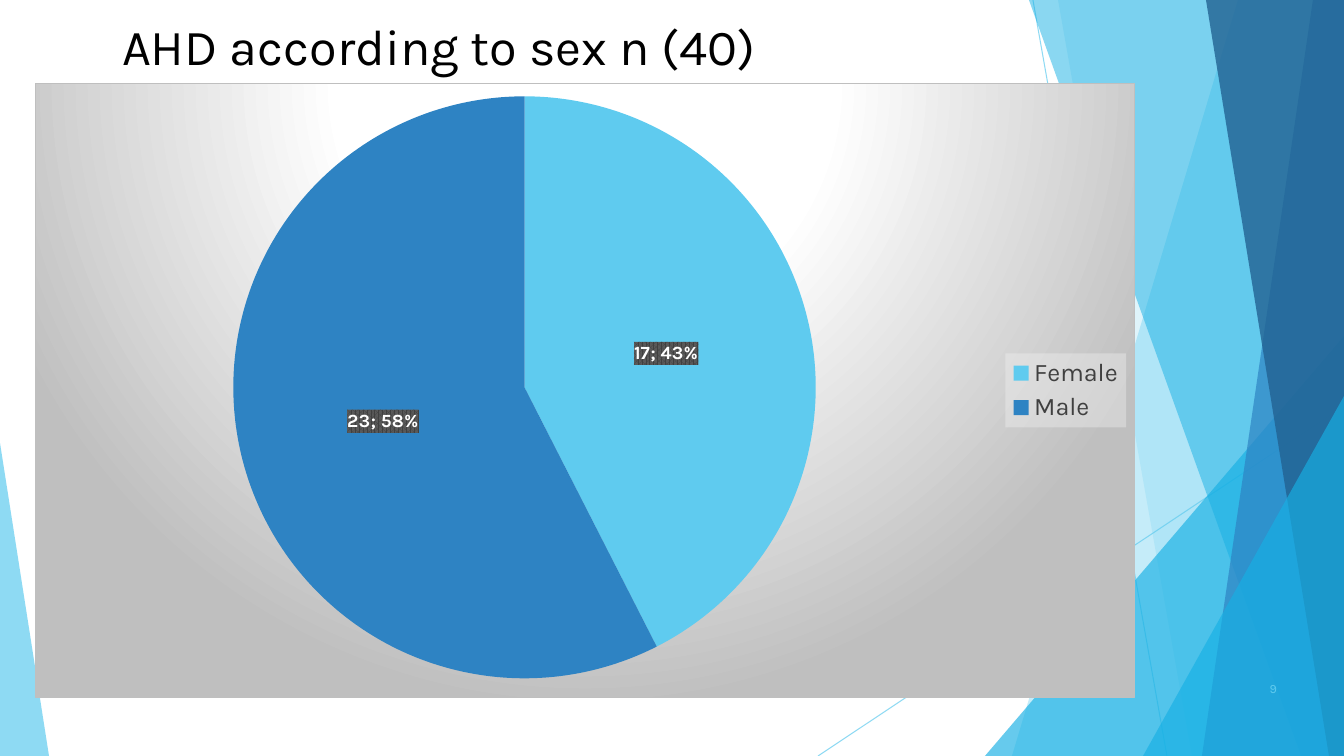
from pptx import Presentation
from pptx.chart.data import CategoryChartData
from pptx.dml.color import RGBColor
from pptx.enum.chart import XL_CHART_TYPE, XL_LABEL_POSITION, XL_LEGEND_POSITION
from pptx.enum.shapes import MSO_CONNECTOR, MSO_SHAPE
from pptx.enum.text import MSO_ANCHOR, PP_ALIGN
from pptx.oxml import parse_xml
from pptx.oxml.ns import nsdecls, qn
from pptx.util import Emu, Pt
from lxml.etree import SubElement

PX = 914400 / 100.8
WIDTH, HEIGHT = 1344, 756
FONT = "Karla"
BLACK = RGBColor(0x00, 0x00, 0x00)
WHITE = RGBColor(0xFF, 0xFF, 0xFF)
GREY = RGBColor(0x40, 0x40, 0x40)
SKY = RGBColor(0x5F, 0xCB, 0xEF)
CYAN = RGBColor(0x17, 0xB0, 0xE4)
BLUE = RGBColor(0x2E, 0x83, 0xC3)
NAVY = RGBColor(0x22, 0x62, 0x92)

RAYS = [((1033, 0), (1167, HEIGHT)), ((WIDTH, 406), (818, HEIGHT))]
FACETS = [
    ("band", (1238, 1012), SKY, 36),
    ("band", (1058, 1192), SKY, 20),
    ("triangle", (985, 336, 359, 420, 1), CYAN, 66),
    ("band", (1029, 1301), CYAN, 50),
    ("band", (1313, 1202), BLUE, 70),
    ("band", (1206, 1329), NAVY, 80),
    ("triangle", (1143, 396, 201, 360, 1), CYAN, 66),
    ("triangle", (0, 443, 49, 313, 0), SKY, 70),
]
CHART_FILL = f"""<c:spPr {nsdecls('c', 'a')}>
<a:gradFill><a:gsLst>
<a:gs pos="0"><a:srgbClr val="FFFFFF"/></a:gs>
<a:gs pos="39000"><a:srgbClr val="FFFFFF"/></a:gs>
<a:gs pos="100000"><a:srgbClr val="BFBFBF"/></a:gs>
</a:gsLst><a:path path="circle">
<a:fillToRect l="50000" t="-80000" r="50000" b="180000"/></a:path></a:gradFill>
<a:ln w="9525"><a:solidFill><a:srgbClr val="BFBFBF"/></a:solidFill></a:ln></c:spPr>"""
LABEL_FILL = f"""<c:spPr {nsdecls('c', 'a')}><a:pattFill prst="pct75">
<a:fgClr><a:srgbClr val="404040"/></a:fgClr>
<a:bgClr><a:srgbClr val="595959"/></a:bgClr></a:pattFill></c:spPr>"""
LEGEND_FILL = f"""<c:spPr {nsdecls('c', 'a')}><a:solidFill>
<a:srgbClr val="F2F2F2"><a:alpha val="39000"/></a:srgbClr></a:solidFill></c:spPr>"""


def px(*lengths):
    """Turn pixel lengths into EMU."""
    return [Emu(round(length * PX)) for length in lengths]


def apply(target, **values):
    """Set each named value on the target."""
    for name, value in values.items():
        setattr(target, name, value)


def style_font(font, size, colour, bold=False):
    """Give a font the slide's typeface, a size and a colour."""
    apply(font, name=FONT, size=Pt(size), bold=bold)
    font.color.rgb = colour


def set_alpha(fill_parent, percent):
    """Make the solid colour below an element partly transparent."""
    colour = next(fill_parent.iter(qn("a:srgbClr")))
    SubElement(colour, qn("a:alpha")).set("val", str(percent * 1000))


def add_backdrop(page, box):
    """Draw the thin rays and translucent facets inside the box."""
    left, top, width, height = box
    right, bottom = left + width, top + height
    for (x1, y1), (x2, y2) in RAYS:
        ray = page.shapes.add_connector(
            MSO_CONNECTOR.STRAIGHT, *px(left + x1, top + y1, left + x2, top + y2))
        ray.line.width = Pt(0.75)
        ray.line.color.rgb = SKY
        properties = ray.element.spPr
        set_alpha(properties, 70)
        SubElement(properties, qn("a:effectLst"))
    for kind, place, colour, alpha in FACETS:
        if kind == "band":
            upper, lower = (left + x for x in place)
            outline = page.shapes.build_freeform(upper, top, scale=PX)
            outline.add_line_segments([(right, top), (right, bottom), (lower, bottom)])
            facet = outline.convert_to_shape()
        else:
            x, y, wide, high, apex = place
            facet = page.shapes.add_shape(
                MSO_SHAPE.ISOSCELES_TRIANGLE, *px(left + x, top + y, wide, high))
            facet.adjustments[0] = apex
        facet.shadow.inherit = False
        facet.fill.solid()
        facet.fill.fore_color.rgb = colour
        set_alpha(facet.element.spPr, alpha)
        facet.line.fill.background()


def write_text(shape, text, size, colour, align, anchor):
    """Write one formatted line into a shape."""
    frame = shape.text_frame
    apply(frame, word_wrap=True, vertical_anchor=anchor)
    para = frame.paragraphs[0]
    para.alignment = align
    span = para.add_run()
    span.text = text
    style_font(span.font, size, colour)


def add_title(page, box, text):
    """Place the title placeholder in the box, in front of the backdrop."""
    title = page.shapes.title
    title.element.getparent().append(title.element)
    left, top, width, height = px(*box)
    apply(title, left=left, top=top, width=width, height=height)
    write_text(title, text, 36, BLACK, PP_ALIGN.LEFT, MSO_ANCHOR.TOP)


def add_page_number(page, box, number):
    """Write the page number in the box."""
    shape = page.shapes.add_textbox(*px(*box))
    write_text(shape, number, 9, SKY, PP_ALIGN.RIGHT, MSO_ANCHOR.MIDDLE)


def place_plot(chart, **fractions):
    """Fix the inner plot area at fractions of the chart."""
    plot_area = next(chart.element.iter(qn("c:plotArea")))
    for old in plot_area.findall(qn("c:layout")):
        plot_area.remove(old)
    values = {"layoutTarget": "inner", "xMode": "edge", "yMode": "edge", **fractions}
    parts = "".join(f'<c:{name} val="{value}"/>' for name, value in values.items())
    plot_area.insert(0, parse_xml(
        f'<c:layout {nsdecls("c")}><c:manualLayout>{parts}</c:manualLayout></c:layout>'))


def add_sex_chart(page, box):
    """Draw the pie of cases by sex with its labels and legend."""
    data = CategoryChartData()
    data.categories = ["Female", "Male"]
    data.add_series("Series 1", (17, 23))
    chart = page.shapes.add_chart(XL_CHART_TYPE.PIE, *px(*box), data).chart
    apply(chart, has_title=False, has_legend=True)
    style_font(chart.font, 10, BLACK)
    chart.element.find(qn("c:txPr")).addprevious(parse_xml(CHART_FILL))
    place_plot(chart, x=0.18, y=0.02, w=0.53, h=0.95)

    legend = chart.legend
    apply(legend, position=XL_LEGEND_POSITION.RIGHT, include_in_layout=False)
    style_font(legend.font, 18, GREY)
    next(chart.element.iter(qn("c:legend"))).find(qn("c:txPr")).addprevious(
        parse_xml(LEGEND_FILL))

    plot = chart.plots[0]
    plot.vary_by_categories = True
    series = plot.series[0]
    for index, colour in enumerate((SKY, BLUE)):
        fill = series.points[index].format.fill
        fill.solid()
        fill.fore_color.rgb = colour
    labels = series.data_labels
    apply(labels, show_value=True, show_percentage=True, show_category_name=False,
          show_legend_key=False, position=XL_LABEL_POSITION.CENTER)
    style_font(labels.font, 13.3, WHITE, bold=True)
    label_xml = next(series._element.iter(qn("c:dLbls")))
    label_xml.find(qn("c:txPr")).addprevious(parse_xml(LABEL_FILL))
    separator = parse_xml(f'<c:separator {nsdecls("c")}>; </c:separator>')
    label_xml.find(qn("c:showBubbleSize")).addnext(separator)


def main():
    """Build the one-page deck and save it."""
    deck = Presentation()
    deck.slide_width, deck.slide_height = px(WIDTH, HEIGHT)
    page = deck.slides.add_slide(deck.slide_layouts[5])
    add_backdrop(page, (0, 0, WIDTH, HEIGHT))
    add_title(page, (112, 10, 948, 145), "AHD according to sex n (40)")
    add_sex_chart(page, (35, 83, 1100, 615))
    add_page_number(page, (1212, 668, 75, 40), "9")
    deck.save("out.pptx")


if __name__ == "__main__":
    main()
